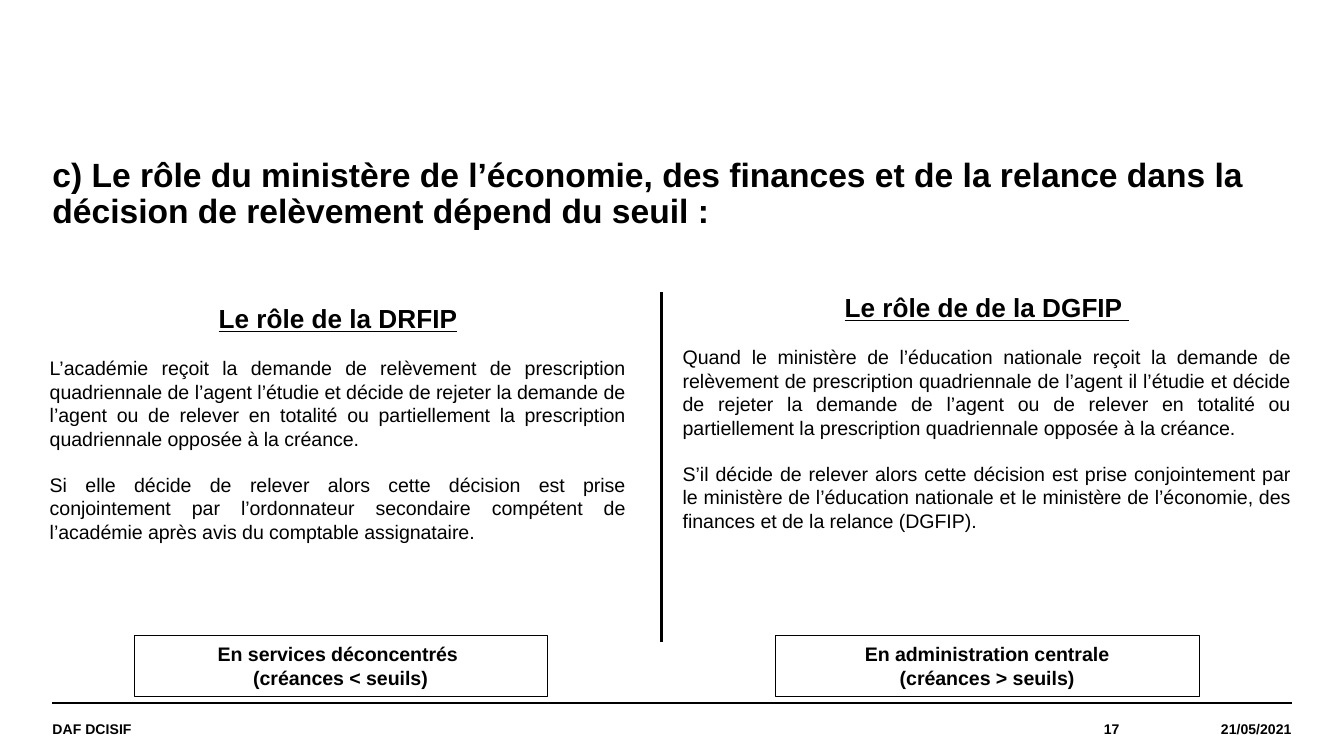
from dataclasses import dataclass
from pptx import Presentation
from pptx.dml.color import RGBColor
from pptx.enum.shapes import MSO_CONNECTOR, MSO_SHAPE
from pptx.enum.text import MSO_ANCHOR, PP_ALIGN
from pptx.oxml.ns import qn
from pptx.util import Inches, Pt
from lxml import etree

LEFT, RIGHT = PP_ALIGN.LEFT, PP_ALIGN.RIGHT
MID, JUST = PP_ALIGN.CENTER, PP_ALIGN.JUSTIFY
TOP, CENTER = MSO_ANCHOR.TOP, MSO_ANCHOR.MIDDLE
RECT, LINE = MSO_SHAPE.RECTANGLE, MSO_CONNECTOR.STRAIGHT


@dataclass(frozen=True)
class Theme:
    face: str = "Arial"
    ink: RGBColor = RGBColor(0, 0, 0)
    title: float = 18
    head: float = 14
    body: float = 10.5
    foot: float = 7.5


theme = Theme()


def write(par, text, size, align=LEFT, bold=True):
    par.text = text
    par.alignment = align
    font = par.font
    font.name, font.size, font.bold = theme.face, Pt(size), bold
    font.color.rgb = theme.ink
    return par


def frame(area, anchor=TOP):
    box = slide.shapes.add_textbox(*map(Inches, area)).text_frame
    box.word_wrap = True
    box.vertical_anchor = anchor
    box.margin_left = box.margin_right = box.margin_top = box.margin_bottom = 0
    return box


deck = Presentation()
deck.slide_width = Inches(10)
deck.slide_height = deck.slide_width * 9 // 16
slide = deck.slides.add_slide(deck.slide_layouts[6])

title = frame((0.39, 1.18, 9.21, 0.59)).paragraphs[0]
write(title, "c) Le rôle du ministère de l’économie, des finances et de la relance dans la "
      "décision de relèvement dépend du seuil :", theme.title)
title.line_spacing = 0.9

roles = [
    ((0.37, 2.25, 4.29, 1.89), "Le rôle de la DRFIP", [
        "L’académie reçoit la demande de relèvement de prescription quadriennale de "
        "l’agent l’étudie et décide de rejeter la demande de l’agent ou de relever en "
        "totalité ou partiellement la prescription quadriennale opposée à la créance. ",
        "Si elle décide de relever alors cette décision est prise conjointement par "
        "l’ordonnateur secondaire compétent de l’académie après avis du comptable "
        "assignataire. "]),
    ((5.08, 2.17, 4.53, 1.91), "Le rôle de de la DGFIP ", [
        "Quand le ministère de l’éducation nationale reçoit la demande de relèvement de "
        "prescription quadriennale de l’agent il l’étudie et décide de rejeter la demande "
        "de l’agent ou de relever en totalité ou partiellement la prescription "
        "quadriennale opposée à la créance. ",
        "S’il décide de relever alors cette décision est prise conjointement par le "
        "ministère de l’éducation nationale et le ministère de l’économie, des finances "
        "et de la relance (DGFIP). "]),
]
for area, head, texts in roles:
    box = frame(area)
    par = write(box.paragraphs[0], head, theme.head, MID)
    par.font.underline = True
    par.space_after = Pt(8)
    for text in texts:
        par = write(box.add_paragraph(), text, theme.body, JUST, False)
        par.space_before, par.space_after = Pt(4), Pt(8)

scopes = [
    (1, 3.07, "En services déconcentrés ", "(créances < seuils)"),
    (5.77, 3.15, "En administration centrale", "(créances > seuils)"),
]
for left, width, place, limit in scopes:
    shape = slide.shapes.add_shape(
        RECT, Inches(left), Inches(4.73), Inches(width), Inches(0.45))
    shape.shadow.inherit = False
    shape.fill.background()
    shape.line.color.rgb = theme.ink
    shape.line.width = Pt(0.25)
    box = shape.text_frame
    box.word_wrap = True
    box.vertical_anchor = TOP
    write(box.paragraphs[0], place, theme.body, MID)
    write(box.add_paragraph(), limit, theme.body, MID)

rules = [(0.39, 5.23, 9.61, 5.23, 0.8), (4.92, 2.17, 4.92, 4.78, 1.5)]
for *ends, weight in rules:
    rule = slide.shapes.add_connector(LINE, *map(Inches, ends))
    rule.line.color.rgb = theme.ink
    rule.line.width = Pt(weight)
    etree.SubElement(rule._element.spPr, qn("a:effectLst"))

feet = [
    (0.39, 6.46, "DAF DCISIF", LEFT),
    (6.85, 1.48, "17", RIGHT),
    (8.33, 1.28, "21/05/2021", RIGHT),
]
for left, width, text, align in feet:
    box = frame((left, 5.23, width, 0.39), CENTER)
    write(box.paragraphs[0], text, theme.foot, align)

deck.save("out.pptx")
